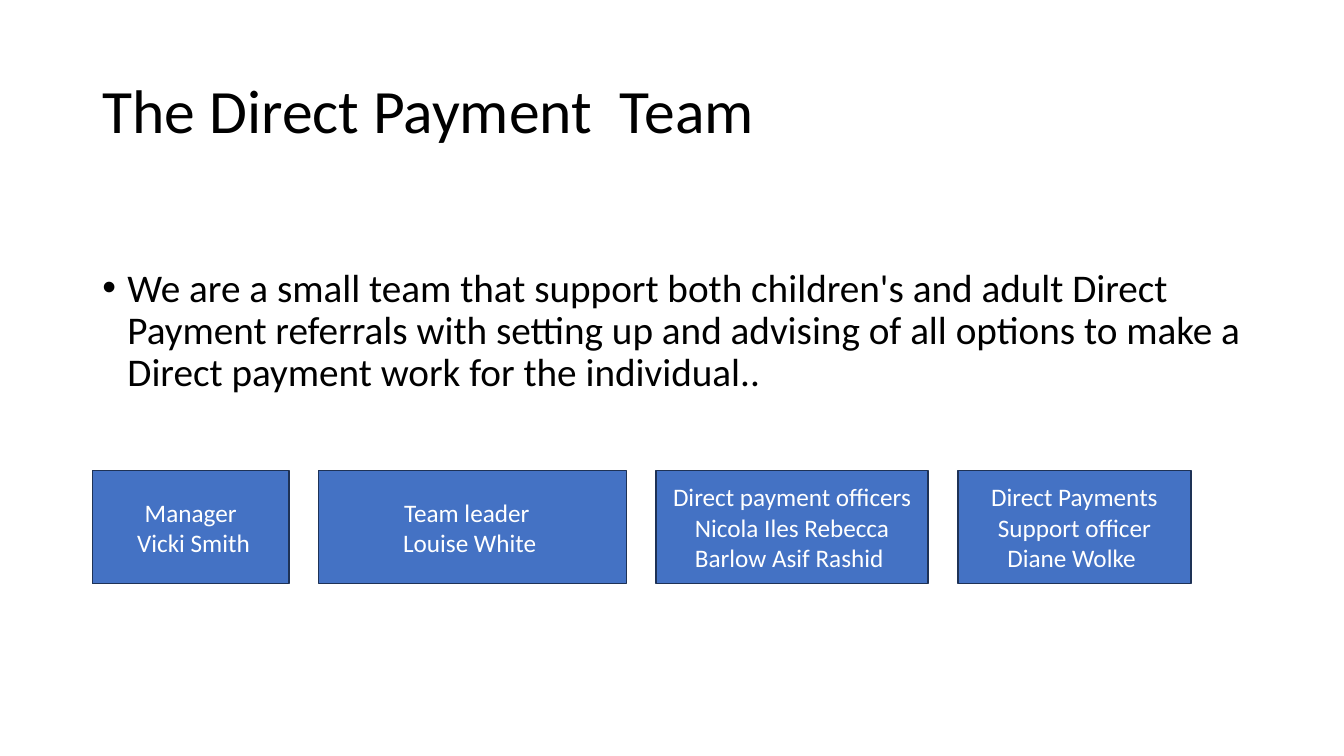
"""Build the Direct Payment team slide."""
from lxml.etree import SubElement
from pptx import Presentation
from pptx.dml.color import RGBColor
from pptx.enum.shapes import MSO_SHAPE
from pptx.enum.text import MSO_ANCHOR, PP_ALIGN
from pptx.oxml.ns import qn
from pptx.util import Pt

BLACK = RGBColor(0x00, 0x00, 0x00)
WHITE = RGBColor(0xFF, 0xFF, 0xFF)
BLUE = RGBColor(0x44, 0x72, 0xC4)
NAVY = RGBColor(0x1E, 0x32, 0x56)
FONT = "Calibri"
LEFT, WIDTH = 66, 828
ROW_TOP, ROW_HEIGHT, GAP = 336, 81, 21.3
INTRO = (
    "We are a small team that support both children's and adult Direct Payment "
    "referrals with setting up and advising of all options to make a Direct "
    "payment work for the individual.."
)
ROLES = [
    (140.4, "Manager\n Vicki Smith"),
    (219.6, "Team leader  \nLouise White "),
    (194.4, "Direct payment officers Nicola Iles Rebecca Barlow Asif Rashid "),
    (166.3, "Direct Payments Support officer Diane Wolke "),
]


def write(frame, text, size, color, align, spacing=1.0):
    frame.word_wrap = True
    frame.text = text
    for para in frame.paragraphs:
        para.alignment = align
        para.line_spacing = spacing
        para.space_before = Pt(0)
        for run in para.runs:
            run.font.name = FONT
            run.font.size = Pt(size)
            run.font.color.rgb = color


def add_title(slide, text):
    title = slide.shapes.title
    title.left, title.top = Pt(LEFT), Pt(28.8)
    title.width, title.height = Pt(WIDTH), Pt(104.4)
    title.text_frame.vertical_anchor = MSO_ANCHOR.MIDDLE
    write(title.text_frame, text, 44, BLACK, PP_ALIGN.LEFT, 0.9)


def add_bullet(slide, text):
    box = slide.shapes.add_textbox(Pt(LEFT), Pt(188), Pt(WIDTH), Pt(100))
    write(box.text_frame, text, 28, BLACK, PP_ALIGN.LEFT, 0.9)
    props = box.text_frame.paragraphs[0]._p.get_or_add_pPr()
    props.set("marL", str(Pt(18)))
    props.set("indent", str(Pt(-18)))
    SubElement(props, qn("a:buFont")).set("typeface", "Arial")
    SubElement(props, qn("a:buChar")).set("char", "•")


def add_role(slide, left, width, text):
    box = slide.shapes.add_shape(
        MSO_SHAPE.FLOWCHART_PROCESS, Pt(left), Pt(ROW_TOP), Pt(width), Pt(ROW_HEIGHT)
    )
    box.shadow.inherit = False
    box.fill.solid()
    box.fill.fore_color.rgb = BLUE
    box.line.color.rgb = NAVY
    box.line.width = Pt(1)
    box.text_frame.vertical_anchor = MSO_ANCHOR.MIDDLE
    write(box.text_frame, text, 18, WHITE, PP_ALIGN.CENTER)


def main():
    deck = Presentation()
    deck.slide_width, deck.slide_height = Pt(960), Pt(540)
    slide = deck.slides.add_slide(deck.slide_layouts.get_by_name("Title Only"))
    add_title(slide, "The Direct Payment  Team")
    add_bullet(slide, INTRO)
    left = LEFT
    for width, text in ROLES:
        add_role(slide, left, width, text)
        left += width + GAP
    deck.save("out.pptx")


if __name__ == "__main__":
    main()
